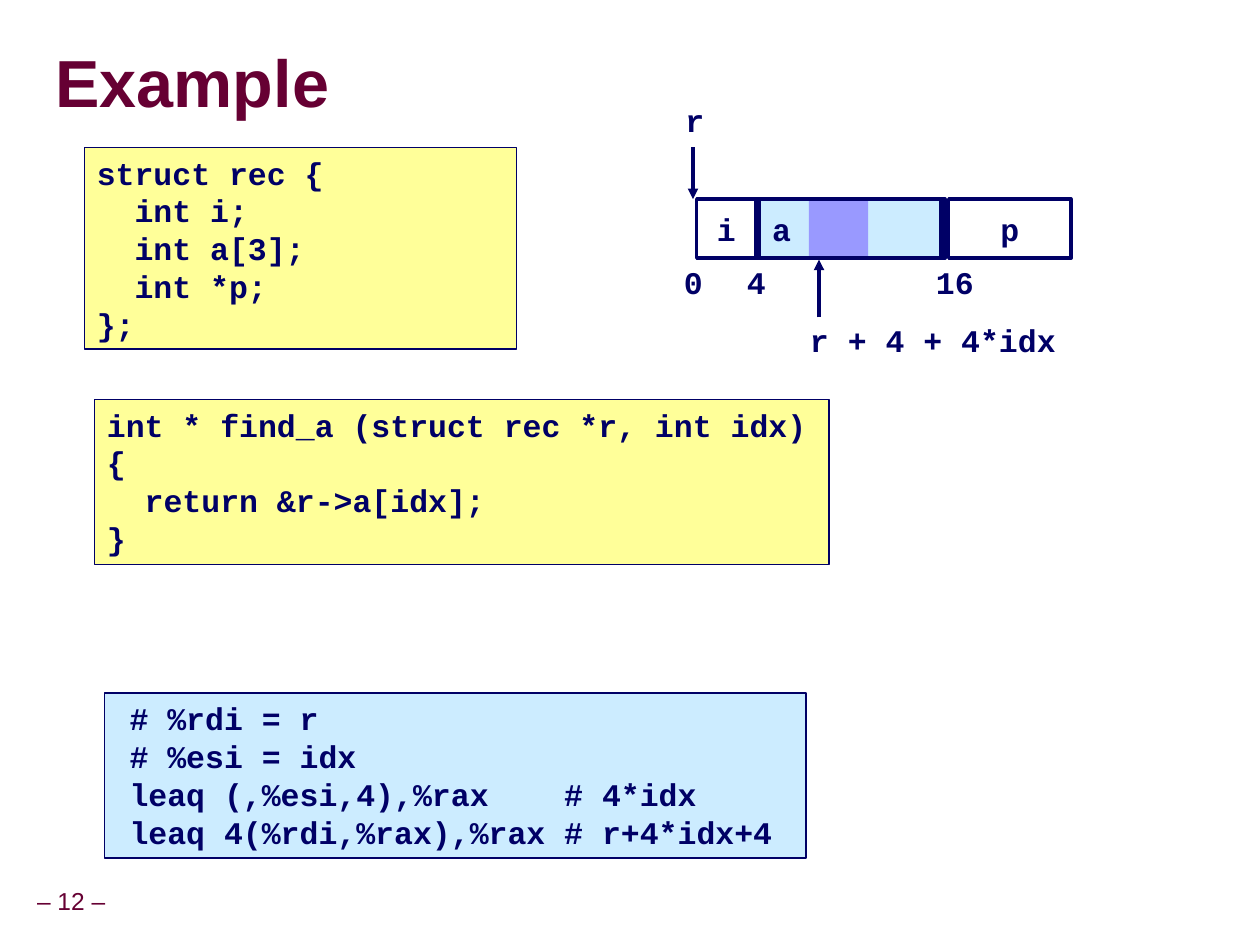
from lxml import etree
from pptx import Presentation
from pptx.dml.color import RGBColor
from pptx.enum.shapes import MSO_CONNECTOR, MSO_SHAPE
from pptx.enum.text import MSO_ANCHOR, PP_ALIGN
from pptx.oxml.ns import qn
from pptx.util import Inches, Pt

RECTANGLE = MSO_SHAPE.RECTANGLE
STRAIGHT = MSO_CONNECTOR.STRAIGHT
TOP, MIDDLE = MSO_ANCHOR.TOP, MSO_ANCHOR.MIDDLE
LEFT, CENTER = PP_ALIGN.LEFT, PP_ALIGN.CENTER

NAVY, MAROON, WHITE = "000066", "660033", "FFFFFF"
YELLOW, PALE_BLUE, VIOLET = "FFFF99", "CCECFF", "9999FF"
CODE_FONT, HEADING_FONT = "Courier New", "Arial"
FIELD_TOP, FIELD_HEIGHT = 1.58, 0.47

STRUCT_CODE = ["struct rec {", "  int i;", "  int a[3];", "  int *p;", "};"]
FUNCTION_CODE = [
    "int * find_a (struct rec *r, int idx)",
    "{",
    "  return &r->a[idx];",
    "}",
]
ASSEMBLY_CODE = [
    "\t# %rdi = r",
    "\t# %esi = idx",
    "\tleaq (,%esi,4),%rax\t# 4*idx",
    "\tleaq 4(%rdi,%rax),%rax\t# r+4*idx+4",
]


def color(value):
    return RGBColor.from_string(value)


def set_tabs(para, stops):
    tab_list = etree.SubElement(para._p.get_or_add_pPr(), qn("a:tabLst"))
    for stop in stops:
        etree.SubElement(tab_list, qn("a:tab"), pos=str(Inches(stop)), algn="l")


def write(box, lines, size=18, font=CODE_FONT, ink=NAVY, bold=True, align=LEFT,
          anchor=TOP, wrap=False, margins=(0.1, 0.05), spacing=None, tabs=()):
    frame = box.text_frame
    frame.word_wrap = wrap
    frame.vertical_anchor = anchor
    frame.margin_left = frame.margin_right = Inches(margins[0])
    frame.margin_top = frame.margin_bottom = Inches(margins[1])
    for number, line in enumerate(lines):
        para = frame.add_paragraph() if number else frame.paragraphs[0]
        para.alignment = align
        if spacing:
            para.line_spacing = spacing
        if tabs:
            set_tabs(para, tabs)
        span = para.add_run()
        span.text = line
        span.font.size = Pt(size)
        span.font.name = font
        span.font.bold = bold
        span.font.color.rgb = color(ink)


def add_box(page, left, top, width, height, fill=None, line_width=None):
    box = page.shapes.add_shape(
        RECTANGLE, Inches(left), Inches(top), Inches(width), Inches(height))
    box.shadow.inherit = False
    if fill:
        box.fill.solid()
        box.fill.fore_color.rgb = color(fill)
    else:
        box.fill.background()
    if line_width:
        box.line.color.rgb = color(NAVY)
        box.line.width = Pt(line_width)
    else:
        box.line.fill.background()
    return box


def add_code(page, left, top, width, height, fill, lines, tabs=()):
    box = add_box(page, left, top, width, height, fill, 1)
    write(box, lines, wrap=True, tabs=tabs)


def add_field(page, left, width, fill, name, align):
    box = add_box(page, left, FIELD_TOP, width, FIELD_HEIGHT, fill, 2)
    write(box, [name], align=align, anchor=MIDDLE)


def add_text(page, left, top, width, height, text, **style):
    box = page.shapes.add_textbox(
        Inches(left), Inches(top), Inches(width), Inches(height))
    write(box, [text], **style)


def add_arrow(page, x, start, end):
    arrow = page.shapes.add_connector(
        STRAIGHT, Inches(x), Inches(start), Inches(x), Inches(end))
    arrow.line.color.rgb = color(NAVY)
    arrow.line.width = Pt(2)
    etree.SubElement(arrow.line._get_or_add_ln(), qn("a:tailEnd"), type="triangle")
    etree.SubElement(arrow._element.spPr, qn("a:effectLst"))


def add_memory_layout(page):
    add_field(page, 5.53, 0.47, WHITE, "i", CENTER)
    add_field(page, 6.03, 1.47, PALE_BLUE, "a", LEFT)
    add_field(page, 7.53, 0.97, WHITE, "p", CENTER)
    for left, width, offset in ((5.33, 0.35, "0"), (5.83, 0.35, "4"), (7.33, 0.5, "16")):
        add_text(page, left, 2.04, width, 0.4, offset)
    add_arrow(page, 6.5, 2.52, 2.06)
    add_text(page, 6.33, 2.5, 2.15, 0.4, "r + 4 + 4*idx")
    add_arrow(page, 5.5, 1.17, FIELD_TOP)
    add_text(page, 5.34, 0.75, 0.35, 0.4, "r")
    add_box(page, 6.42, FIELD_TOP, 0.47, FIELD_HEIGHT, VIOLET)
    add_box(page, 6, FIELD_TOP, 1.47, FIELD_HEIGHT, line_width=2)


def main():
    deck = Presentation()
    deck.slide_width, deck.slide_height = Inches(10), Inches(7.5)
    page = deck.slides.add_slide(deck.slide_layouts[6])
    add_text(page, -0.09, 6.99, 1.31, 0.34, "– 12 –", size=14, font=HEADING_FONT,
             ink=MAROON, bold=False, align=CENTER, anchor=MIDDLE,
             margins=(0.05, 0.05), spacing=0.9)
    add_code(page, 0.67, 1.17, 3.43, 1.6, YELLOW, STRUCT_CODE)
    add_code(page, 0.83, 5.5, 5.57, 1.31, PALE_BLUE, ASSEMBLY_CODE, tabs=(0.1, 3.55))
    add_code(page, 0.75, 3.17, 5.83, 1.31, YELLOW, FUNCTION_CODE)
    add_memory_layout(page)
    add_text(page, 0.44, 0.27, 9.51, 0.83, "Example", size=38, font=HEADING_FONT,
             ink=MAROON, anchor=MIDDLE, wrap=True, margins=(0, 0), spacing=0.87)
    deck.save("out.pptx")


if __name__ == "__main__":
    main()
